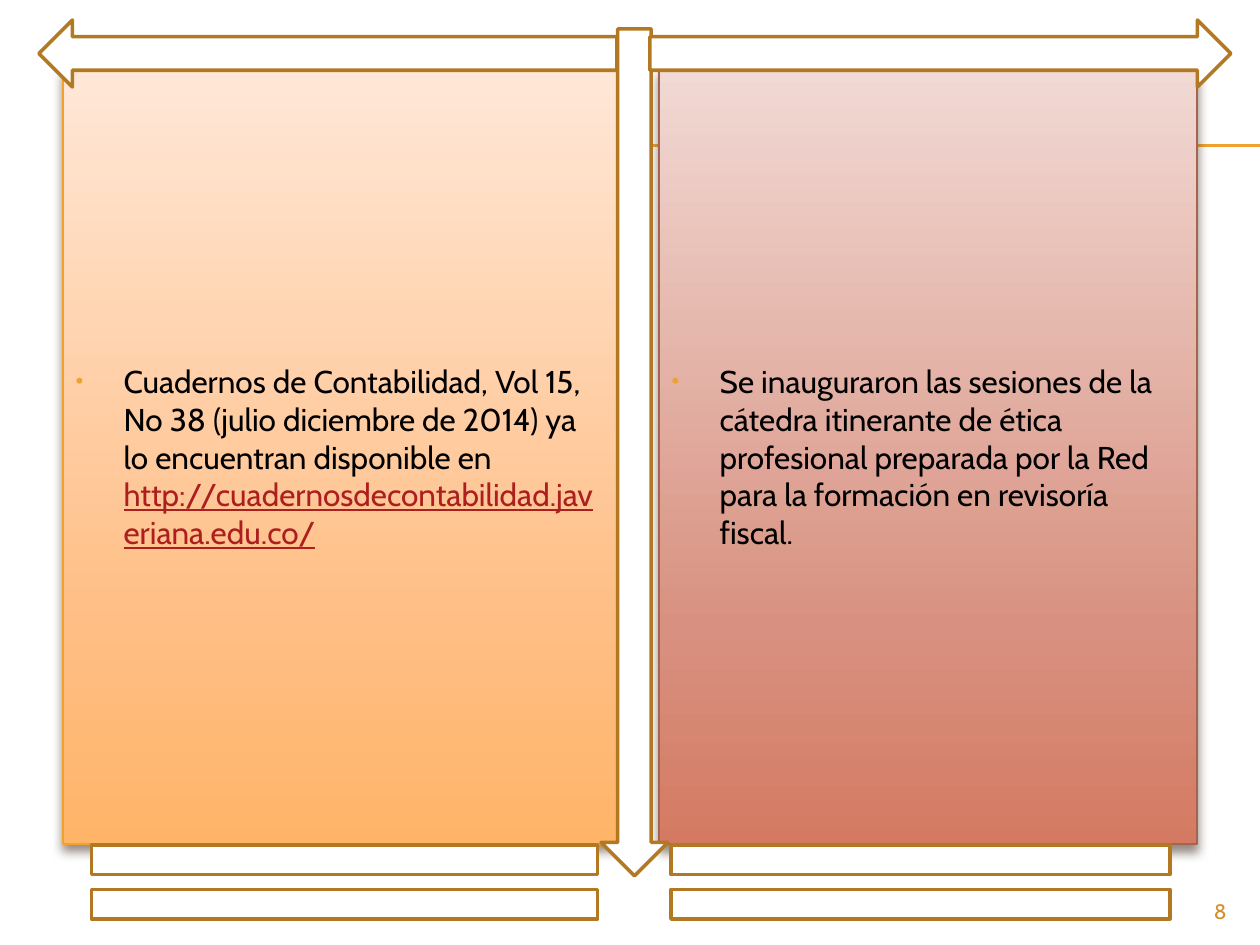
import copy
from dataclasses import dataclass

import lxml.etree
import pptx
import pptx.dml.color
import pptx.enum.shapes
import pptx.enum.text
import pptx.oxml
import pptx.oxml.ns
import pptx.util

RGBColor = pptx.dml.color.RGBColor
MSO_SHAPE = pptx.enum.shapes.MSO_SHAPE

WHITE = RGBColor(0xFF, 0xFF, 0xFF)
BLACK = RGBColor(0, 0, 0)
ORANGE = RGBColor(0xF0, 0xA2, 0x2E)
BROWN = RGBColor(0xB2, 0x78, 0x22)
TERRACOTTA = RGBColor(0xA5, 0x64, 0x4E)
LINK_RED = RGBColor(0xAD, 0x1F, 0x1F)
NUMBER_ORANGE = RGBColor(0xD4, 0x8F, 0x29)
PEACH_STOPS = (RGBColor(0xFF, 0xE7, 0xD7), RGBColor(0xFF, 0xBE, 0x84), RGBColor(0xFF, 0xB4, 0x68))
ROSE_STOPS = (RGBColor(0xF1, 0xD9, 0xD4), RGBColor(0xD8, 0x91, 0x80), RGBColor(0xD4, 0x7A, 0x62))
STOP_POSITIONS = (0, 0.72, 1)

FONT = "Cabin"
EMU_PER_PX = 914400 / 126
A_NS = 'xmlns:a="http://schemas.openxmlformats.org/drawingml/2006/main"'


@dataclass
class Box:
    left: int
    top: int
    width: int
    height: int


@dataclass
class NewsPanel:
    box: Box
    stops: tuple[RGBColor, ...]
    border: RGBColor
    news: str
    link: str = ""


@dataclass
class FrameShape:
    preset: MSO_SHAPE
    box: Box


PANELS = [
    NewsPanel(Box(63, 69, 557, 775), PEACH_STOPS, ORANGE,
              "Cuadernos de Contabilidad, Vol 15, No 38 (julio diciembre de 2014) "
              "ya lo encuentran disponible en ",
              "http://cuadernosdecontabilidad.javeriana.edu.co/"),
    NewsPanel(Box(659, 69, 538, 775), ROSE_STOPS, TERRACOTTA,
              "Se inauguraron las sesiones de la cátedra itinerante de ética profesional "
              "preparada por la Red para la formación en revisoría fiscal."),
]
FRAME = [
    FrameShape(MSO_SHAPE.DOWN_ARROW, Box(601, 29, 67, 847)),
    FrameShape(MSO_SHAPE.RIGHT_ARROW, Box(650, 20, 581, 67)),
    FrameShape(MSO_SHAPE.LEFT_ARROW, Box(39, 20, 578, 67)),
    FrameShape(MSO_SHAPE.MATH_EQUAL, Box(0, 819, 689, 126)),
    FrameShape(MSO_SHAPE.MATH_EQUAL, Box(581, 819, 679, 126)),
]


def px(length: int) -> pptx.util.Emu:
    return pptx.util.Emu(round(length * EMU_PER_PX))


def bounds(box: Box) -> list[pptx.util.Emu]:
    return [px(n) for n in (box.left, box.top, box.width, box.height)]


def add_rule(slide, y: int) -> None:
    rule = slide.shapes.add_connector(
        pptx.enum.shapes.MSO_CONNECTOR.STRAIGHT, px(70), px(y), px(1260), px(y))
    rule.line.color.rgb = ORANGE
    rule.line.width = pptx.util.Pt(0.75)
    lxml.etree.SubElement(rule._element.spPr, pptx.oxml.ns.qn("a:effectLst"))
    # Rules lie behind the panels
    slide.shapes._spTree.insert(2, rule._element)


def fill_gradient(shape, colors: tuple[RGBColor, ...]) -> None:
    shape.fill.gradient()
    shape.fill.gradient_angle = 270
    stop_list = shape._element.spPr.find(".//" + pptx.oxml.ns.qn("a:gsLst"))
    stop_list.append(copy.deepcopy(stop_list[-1]))
    for stop, position, color in zip(shape.fill.gradient_stops, STOP_POSITIONS, colors):
        stop.position = position
        stop.color.rgb = color


def add_shadow(shape) -> None:
    shape._element.spPr.append(pptx.oxml.parse_xml(
        f'<a:effectLst {A_NS}><a:outerShdw blurRad="76200" dist="50800" dir="5400000" '
        'rotWithShape="0"><a:srgbClr val="4E3B30"><a:alpha val="60000"/></a:srgbClr>'
        '</a:outerShdw></a:effectLst>'))


def set_bullet(paragraph) -> None:
    properties = paragraph._p.get_or_add_pPr()
    indent = px(48)
    properties.set("marL", str(indent))
    properties.set("indent", str(-indent))
    for bullet in (f'<a:buClr {A_NS}><a:srgbClr val="{ORANGE}"/></a:buClr>',
                   f'<a:buSzPct {A_NS} val="70000"/>',
                   f'<a:buFont {A_NS} typeface="Arial"/>',
                   f'<a:buChar {A_NS} char="•"/>'):
        properties.append(pptx.oxml.parse_xml(bullet))


def fill_panel(placeholder, panel: NewsPanel) -> None:
    (placeholder.left, placeholder.top,
     placeholder.width, placeholder.height) = bounds(panel.box)
    fill_gradient(placeholder, panel.stops)
    placeholder.line.color.rgb = panel.border
    placeholder.line.width = pptx.util.Pt(0.79)
    add_shadow(placeholder)

    frame = placeholder.text_frame
    frame.auto_size = pptx.enum.text.MSO_AUTO_SIZE.NONE
    frame.vertical_anchor = pptx.enum.text.MSO_ANCHOR.MIDDLE
    item = frame.paragraphs[0]
    set_bullet(item)
    item.space_before = pptx.util.Pt(0)
    item.font.name = FONT
    item.font.size = pptx.util.Pt(18)
    item.font.color.rgb = BLACK
    item.add_run().text = panel.news
    if panel.link:
        address = item.add_run()
        address.text = panel.link
        address.font.underline = True
        address.font.color.rgb = LINK_RED


def add_frame_shape(slide, part: FrameShape) -> None:
    shape = slide.shapes.add_shape(part.preset, *bounds(part.box))
    shape.shadow.inherit = False
    shape.fill.solid()
    shape.fill.fore_color.rgb = WHITE
    shape.line.color.rgb = BROWN
    shape.line.width = pptx.util.Pt(2)


def add_page_number(slide, number: str, box: Box) -> None:
    frame = slide.shapes.add_textbox(*bounds(box)).text_frame
    frame.word_wrap = True
    page = frame.paragraphs[0]
    page.text = number
    page.alignment = pptx.enum.text.PP_ALIGN.RIGHT
    page.font.name = FONT
    page.font.size = pptx.util.Pt(12)
    page.font.color.rgb = NUMBER_ORANGE


def main() -> None:
    deck = pptx.Presentation()
    deck.slide_width, deck.slide_height = px(1260), px(945)
    slide = deck.slides.add_slide(deck.slide_layouts.get_by_name("Two Content"))
    slide.background.fill.solid()
    slide.background.fill.fore_color.rgb = WHITE

    # The slide has no title
    title = slide.shapes.title._element
    title.getparent().remove(title)

    # Double rule behind the content
    for y in (145, 146):
        add_rule(slide, y)

    # News panels
    for placeholder, panel in zip(slide.placeholders, PANELS):
        fill_panel(placeholder, panel)

    # Arrows and bars around the panels
    for part in FRAME:
        add_frame_shape(slide, part)

    add_page_number(slide, "8", Box(1134, 892, 105, 34))
    deck.save("out.pptx")


if __name__ == "__main__":
    main()
